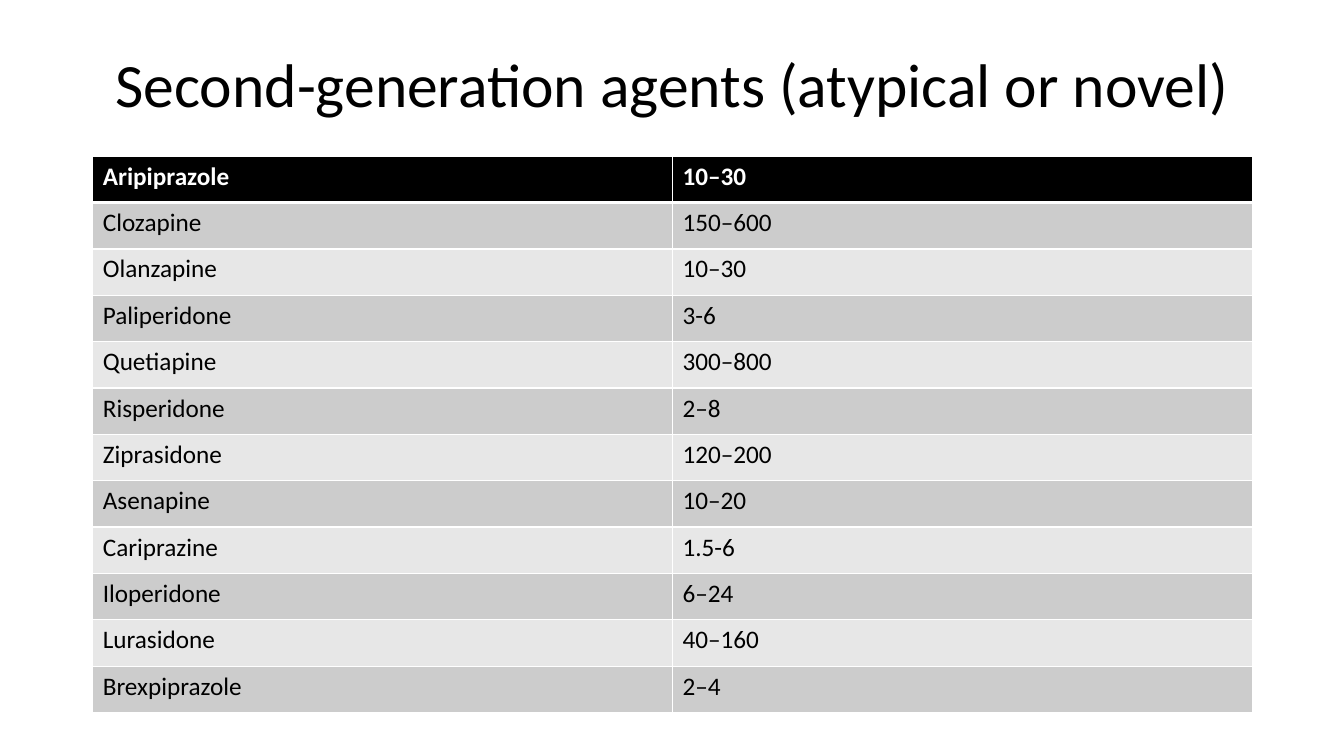
from lxml.etree import SubElement
from pptx import Presentation
from pptx.dml.color import RGBColor
from pptx.enum.text import MSO_ANCHOR, PP_ALIGN
from pptx.oxml.ns import qn
from pptx.util import Inches, Pt

TITLE = "Second-generation agents (atypical or novel)"
DOSES = [
    ("Aripiprazole", "10–30"),
    ("Clozapine", "150–600"),
    ("Olanzapine", "10–30"),
    ("Paliperidone", "3-6"),
    ("Quetiapine", "300–800"),
    ("Risperidone", "2–8"),
    ("Ziprasidone", "120–200"),
    ("Asenapine", "10–20"),
    ("Cariprazine", "1.5-6"),
    ("Iloperidone", "6–24"),
    ("Lurasidone", "40–160"),
    ("Brexpiprazole", "2–4"),
]
LEFT, COL, ROW = 0.92, 5.75, 0.46
WIDTH = 2 * COL
BLACK, WHITE = "000000", "FFFFFF"
BANDS = ["E7E7E7", "CCCCCC"]


def color(code):
    return RGBColor.from_string(code)


def style(par, size, code, bold=False):
    for run in par.runs:
        font = run.font
        font.name, font.size, font.bold = "Calibri", Pt(size), bold
        font.color.rgb = color(code)


def place(shape, *box):
    shape.left, shape.top, shape.width, shape.height = map(Inches, box)


def border(cell, side, width):
    line = SubElement(cell._tc.get_or_add_tcPr(), qn("a:ln" + side), w=str(Pt(width)))
    fill = SubElement(line, qn("a:solidFill"))
    SubElement(fill, qn("a:srgbClr"), val=WHITE)


def add_title(slide):
    title = slide.shapes.title
    place(title, LEFT, 0.4, WIDTH, 0.93)
    frame = title.text_frame
    frame.text = TITLE
    frame.word_wrap = True
    frame.vertical_anchor = MSO_ANCHOR.MIDDLE
    par = frame.paragraphs[0]
    par.alignment = PP_ALIGN.CENTER
    par.line_spacing = 0.9
    style(par, 44, BLACK)


def fill_cell(cell, text, row):
    head = row == 0
    cell.text = text
    style(cell.text_frame.paragraphs[0], 18, WHITE if head else BLACK, head)
    # The rule below the header is shared by the first two rows.
    widths = {"L": 1, "R": 1, "T": 3 if row == 1 else 1, "B": 3 if head else 1}
    for side, width in widths.items():
        border(cell, side, width)
    cell.fill.solid()
    cell.fill.fore_color.rgb = color(BLACK if head else BANDS[row % 2])


def add_doses(slide):
    box = map(Inches, (LEFT, 1.55, WIDTH, ROW * len(DOSES)))
    table = slide.shapes.add_table(len(DOSES), 2, *box).table
    for row, pair in enumerate(DOSES):
        table.rows[row].height = Inches(ROW)
        for col, text in enumerate(pair):
            fill_cell(table.cell(row, col), text, row)


def main():
    deck = Presentation()
    deck.slide_width, deck.slide_height = Inches(13.33), Inches(7.5)
    slide = deck.slides.add_slide(deck.slide_layouts[5])
    add_title(slide)
    add_doses(slide)
    deck.save("out.pptx")


if __name__ == "__main__":
    main()
